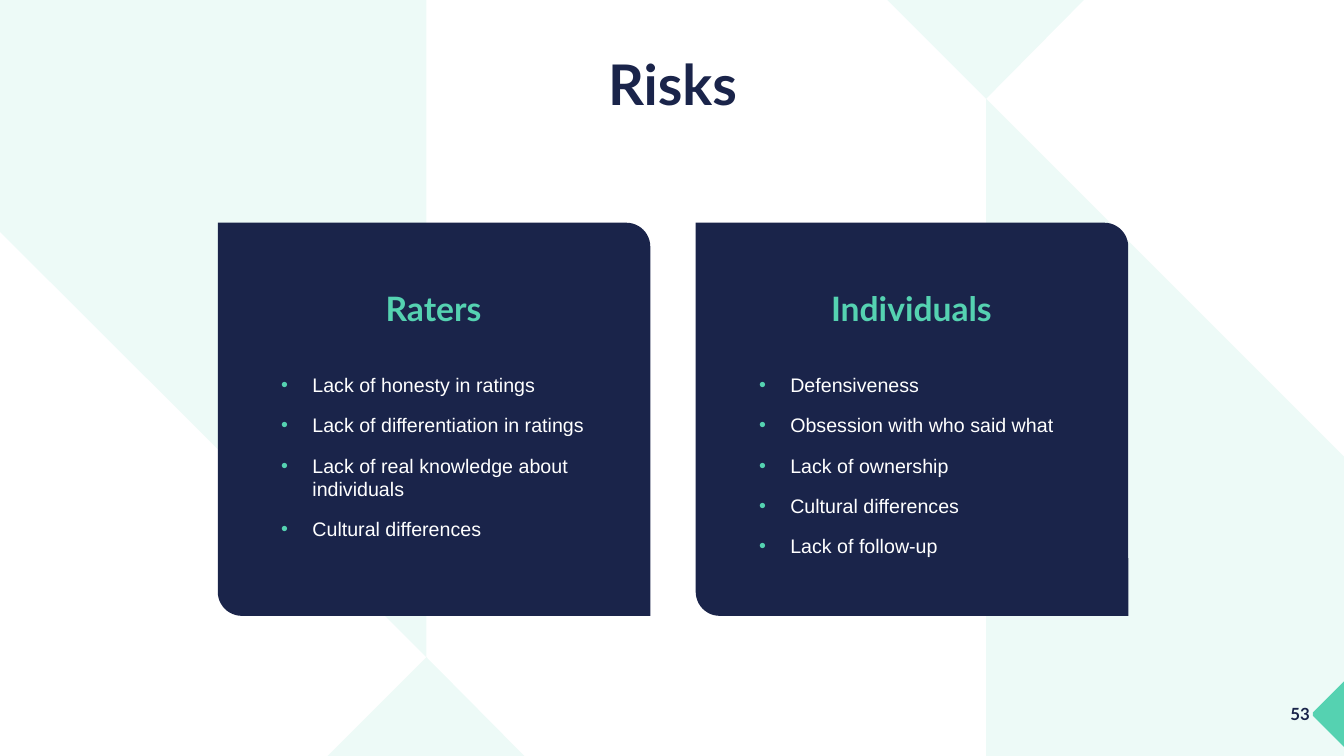
import pptx
import pptx.util
import pptx.dml.color
import pptx.enum.shapes
import pptx.enum.text
import pptx.oxml
import pptx.oxml.ns
import lxml.etree

Inches = pptx.util.Inches
Align = pptx.enum.text.PP_ALIGN

NAVY = "1A244A"
MINT = "55D2B1"
WHITE = "FFFFFF"

BACKDROP = [
    [(0, 0), (4.23, 0), (4.23, 6.52), (0, 2.3)],
    [(8.8, 0), (10.75, 0), (9.78, 0.98)],
    [(9.78, 0.98), (13.33, 4.53), (13.33, 7.5), (9.78, 7.5)],
    [(4.23, 6.52), (5.2, 7.5), (3.25, 7.5)],
]
PAGE_MARKER = [(13.33, 7.41), (13.02, 7.1), (13.02, 7.07), (13.33, 6.76)]

CARDS = [
    ("Raters", [
        "Lack of honesty in ratings",
        "Lack of differentiation in ratings",
        "Lack of real knowledge about individuals",
        "Cultural differences",
    ]),
    ("Individuals", [
        "Defensiveness",
        "Obsession with who said what",
        "Lack of ownership",
        "Cultural differences",
        "Lack of follow-up",
    ]),
]
CARD_LEFT, CARD_TOP, CARD_PITCH = 2.16, 2.21, 4.74


def color(hex_string):
    return pptx.dml.color.RGBColor.from_string(hex_string)


def add_xml(parent, tag, **attributes):
    return lxml.etree.SubElement(parent, pptx.oxml.ns.qn(tag), attributes)


def paint(shape, fill, opacity=100):
    """Give a shape a flat fill with no line or shadow; opacity in percent."""
    shape.shadow.inherit = False
    shape.line.fill.background()
    shape.fill.solid()
    shape.fill.fore_color.rgb = color(fill)
    if opacity < 100:
        solid = shape.fill._xPr.find(pptx.oxml.ns.qn("a:solidFill"))
        add_xml(solid[0], "a:alpha", val=str(opacity * 1000))


def add_polygon(page, points, opacity=100):
    corners = [(Inches(x), Inches(y)) for x, y in points]
    builder = page.shapes.build_freeform(*corners[0])
    builder.add_line_segments(corners[1:], close=True)
    paint(builder.convert_to_shape(), MINT, opacity)


def add_bullet(para):
    properties = para._p.get_or_add_pPr()
    properties.set("marL", str(Inches(0.31)))
    properties.set("indent", str(-Inches(0.31)))
    add_xml(add_xml(properties, "a:buClr"), "a:srgbClr", val=MINT)
    add_xml(properties, "a:buFont", typeface="Arial")
    add_xml(properties, "a:buChar", char="•")


def style(para, size, hex_color, font="Lato", bold=True):
    para.font.size = pptx.util.Pt(size)
    para.font.name = font
    para.font.bold = bold
    para.font.color.rgb = color(hex_color)


def add_box(page, left, top, width, height):
    box = page.shapes.add_textbox(Inches(left), Inches(top), Inches(width), Inches(height))
    box.text_frame.word_wrap = True
    return box.text_frame


def add_label(page, bounds, text, size, hex_color, align):
    frame = add_box(page, *bounds)
    para = frame.paragraphs[0]
    para.text = text
    para.alignment = align
    style(para, size, hex_color)
    return frame


def add_bullet_list(page, bounds, items):
    frame = add_box(page, *bounds)
    for index, item in enumerate(items):
        para = frame.add_paragraph() if index else frame.paragraphs[0]
        para.text = item
        add_bullet(para)
        para.space_after = pptx.util.Pt(12)
        style(para, 14, WHITE, "Arial", False)


def add_card(page, left, heading, items):
    card = page.shapes.add_shape(
        pptx.enum.shapes.MSO_SHAPE.ROUND_2_DIAG_RECTANGLE,
        Inches(left), Inches(CARD_TOP), Inches(4.29), Inches(3.9))
    card.adjustments[0] = 0
    card.adjustments[1] = 0.061
    paint(card, NAVY)
    add_label(page, (left + 0.41, CARD_TOP + 0.6, 3.46, 0.5), heading, 24, MINT, Align.CENTER)
    add_bullet_list(page, (left + 0.53, CARD_TOP + 1.44, 3.22, 1.95), items)


def main():
    deck = pptx.Presentation()
    deck.slide_width = Inches(13.33)
    deck.slide_height = Inches(7.5)
    page = deck.slides.add_slide(deck.slide_layouts[6])

    for points in BACKDROP:
        add_polygon(page, points, opacity=10)
    add_polygon(page, PAGE_MARKER)
    add_label(page, (12.4, 6.93, 0.69, 0.3), "53", 12, NAVY, Align.RIGHT)

    title = add_label(page, (0.92, 0.47, 11.5, 0.79), "Risks", 40, NAVY, Align.CENTER)
    title.vertical_anchor = pptx.enum.text.MSO_ANCHOR.MIDDLE
    title.paragraphs[0].line_spacing = 0.9

    for index, (heading, items) in enumerate(CARDS):
        add_card(page, CARD_LEFT + index * CARD_PITCH, heading, items)

    deck.save("out.pptx")


if __name__ == "__main__":
    main()
